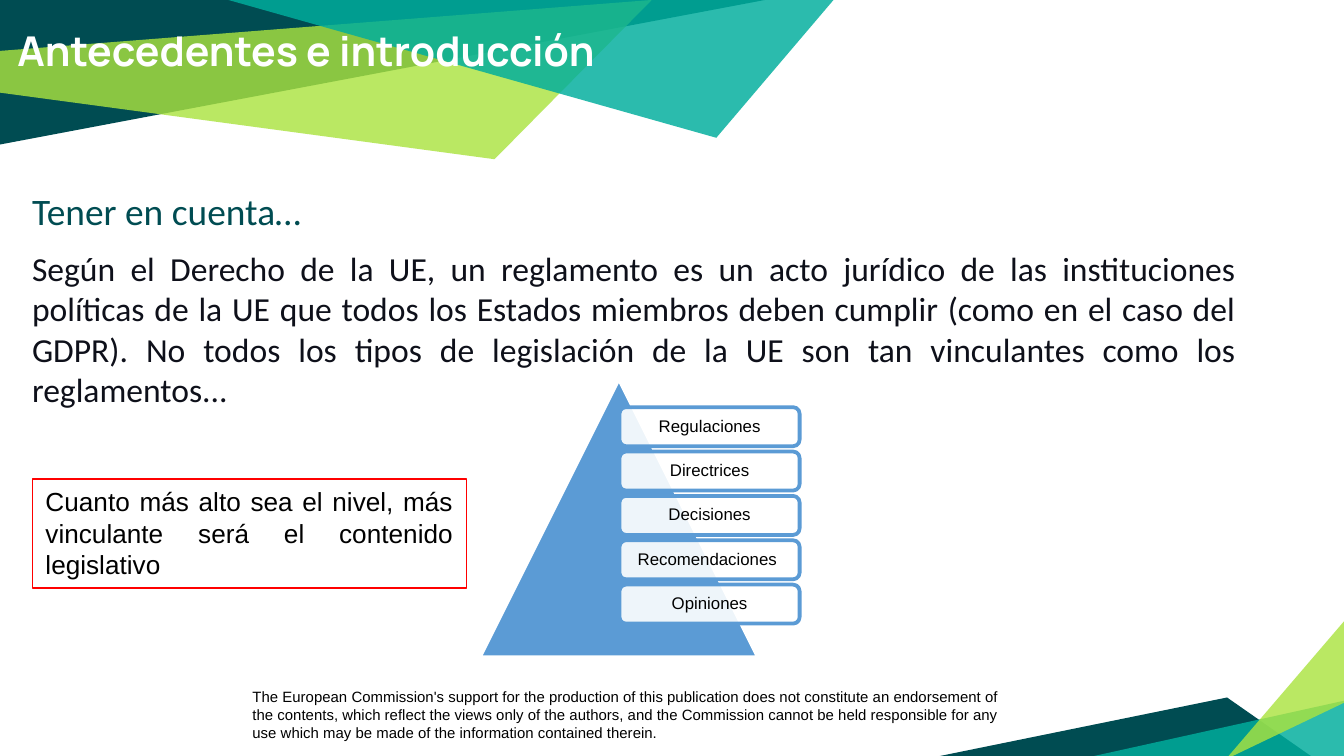
from dataclasses import dataclass

import pptx
import pptx.dml.color
import pptx.enum.shapes
import pptx.enum.text
import pptx.oxml.ns
import pptx.util
from lxml import etree

PX = 4572  # EMU per px, 200 px to the inch
SHAPE = pptx.enum.shapes.MSO_SHAPE
ALIGN = pptx.enum.text.PP_ALIGN
ANCHOR = pptx.enum.text.MSO_ANCHOR
AUTO = pptx.enum.text.MSO_AUTO_SIZE


@dataclass(frozen=True)
class Theme:
    dark: str = "004C52"
    lime: str = "ABE33F"
    teal: str = "00AE9D"
    blue: str = "5B9BD5"
    red: str = "FF0000"
    white: str = "FFFFFF"
    black: str = "000000"
    ink: str = "0E101A"
    title_size: int = 22
    heading_size: int = 20
    body_size: int = 18
    note_size: int = 14
    level_size: int = 9
    footer_size: int = 8


T = Theme()


@dataclass(frozen=True)
class Box:
    x: int
    y: int
    w: int
    h: int

    def emu(self) -> tuple[int, ...]:
        return tuple(v * PX for v in (self.x, self.y, self.w, self.h))


@dataclass(frozen=True)
class Ribbon:
    points: tuple[tuple[int, int], ...]
    color: str
    alpha: int = 100


@dataclass(frozen=True)
class Inset:
    left: int = 20
    top: int = 10
    right: int = 20
    bottom: int = 10


@dataclass(frozen=True)
class Style:
    font: str
    size: int
    color: str
    bold: bool = False
    align: ALIGN = ALIGN.LEFT
    anchor: ANCHOR = ANCHOR.TOP
    inset: Inset = Inset()
    grow: bool = False
    spacing: float = 1.0


RIBBONS = (
    Ribbon(((0, 0), (0, 215), (1138, 0)), T.dark),
    Ribbon(((-2, 76), (0, 138), (736, 237), (970, 0)), T.lime, 81),
    Ribbon(((1394, 1126), (1952, 1126), (1826, 1038)), T.dark),
    Ribbon(((2004, 1042), (2004, 1130), (1606, 1130)), T.teal, 83),
    Ribbon(((2004, 1044), (2004, 920), (1824, 1130)), T.lime, 81),
    Ribbon(((340, 0), (1066, 205), (1242, -2), (1218, 0)), T.teal, 83),
)
LEVELS = ("Regulaciones", "Directrices", "Decisiones", "Recomendaciones ", "Opiniones")
FIRST_LEVEL = Box(922, 606, 268, 58)
LEVEL_STEP = 66

WIDE = Inset(20, 20, 20, 20)
TITLE = Style("Manrope", T.title_size, T.white, bold=True, anchor=ANCHOR.MIDDLE, inset=WIDE)
HEADING = Style("Calibri", T.heading_size, T.dark, anchor=ANCHOR.MIDDLE, inset=WIDE)
BODY = Style("Calibri", T.body_size, T.ink, align=ALIGN.JUSTIFY, inset=Inset(right=38), grow=True)
NOTE = Style("Arial", T.note_size, T.black, align=ALIGN.JUSTIFY, grow=True)
LEVEL = Style("Arial", T.level_size, T.black, align=ALIGN.CENTER, anchor=ANCHOR.MIDDLE,
              inset=Inset(10, 10, 10, 10), spacing=0.9)
FOOTER = Style("Arial", T.footer_size, T.black, grow=True)


def rgb(color: str) -> pptx.dml.color.RGBColor:
    return pptx.dml.color.RGBColor.from_string(color)


def paint(sp, fill: str | None, line: str | None = None, width: float = 0, alpha: int = 100) -> None:
    """Set fill and outline; None leaves either one empty, alpha is the fill's opacity in percent."""
    sp.shadow.inherit = False
    if fill:
        sp.fill.solid()
        sp.fill.fore_color.rgb = rgb(fill)
    else:
        sp.fill.background()
    if alpha < 100:
        clr = sp._element.spPr.find(pptx.oxml.ns.qn("a:solidFill"))[0]
        etree.SubElement(clr, pptx.oxml.ns.qn("a:alpha"), val=str(alpha * 1000))
    if line:
        sp.line.color.rgb = rgb(line)
        sp.line.width = pptx.util.Pt(width)
    else:
        sp.line.fill.background()


def write(sp, text: str, style: Style) -> None:
    tf = sp.text_frame
    tf.text = text
    tf.word_wrap = True
    tf.auto_size = AUTO.SHAPE_TO_FIT_TEXT if style.grow else AUTO.NONE
    tf.vertical_anchor = style.anchor
    tf.margin_left, tf.margin_right = style.inset.left * PX, style.inset.right * PX
    tf.margin_top, tf.margin_bottom = style.inset.top * PX, style.inset.bottom * PX
    p = tf.paragraphs[0]
    p.alignment = style.align
    p.line_spacing = style.spacing
    font = p.runs[0].font
    font.name = style.font
    font.size = pptx.util.Pt(style.size)
    font.bold = style.bold
    font.color.rgb = rgb(style.color)


def add_text(s, box: Box, text: str, style: Style) -> None:
    write(s.shapes.add_textbox(*box.emu()), text, style)


def add_ribbon(s, ribbon: Ribbon) -> None:
    start, *rest = ribbon.points
    builder = s.shapes.build_freeform(*start, scale=PX)
    builder.add_line_segments(rest, close=True)
    paint(builder.convert_to_shape(), ribbon.color, alpha=ribbon.alpha)


def add_title(s, box: Box, text: str) -> None:
    """Place the title placeholder in front of everything drawn so far."""
    sp = s.shapes.title
    sp._element.getparent().append(sp._element)
    sp.left, sp.top, sp.width, sp.height = box.emu()
    write(sp, text, TITLE)


def add_pyramid(s) -> None:
    group = s.shapes.add_group_shape()
    triangle = group.shapes.add_shape(SHAPE.ISOSCELES_TRIANGLE, *Box(714, 564, 414, 414).emu())
    paint(triangle, T.blue, T.white, 2)
    first = FIRST_LEVEL
    for i, name in enumerate(LEVELS):
        box = Box(first.x, first.y + i * LEVEL_STEP, first.w, first.h)
        sp = group.shapes.add_shape(SHAPE.ROUNDED_RECTANGLE, *box.emu())
        paint(sp, T.white, T.blue, 2, alpha=90)
        write(sp, name, LEVEL)


def main() -> None:
    prs = pptx.Presentation()
    prs.slide_width, prs.slide_height = 2000 * PX, 1125 * PX
    s = prs.slides.add_slide(prs.slide_layouts[5])

    add_text(s, Box(356, 1014, 1158, 100),
             "The European Commission's support for the production of this publication does not "
             "constitute an endorsement of the contents, which reflect the views only of the "
             "authors, and the Commission cannot be held responsible for any use which may be "
             "made of the information contained therein.", FOOTER)
    for ribbon in RIBBONS:
        add_ribbon(s, ribbon)
    add_title(s, Box(6, 15, 1694, 120), "Antecedentes e introducción")
    add_text(s, Box(28, 359, 1850, 310),
             "Según el Derecho de la UE, un reglamento es un acto jurídico de las instituciones "
             "políticas de la UE que todos los Estados miembros deben cumplir (como en el caso "
             "del GDPR). No todos los tipos de legislación de la UE son tan vinculantes como "
             "los reglamentos...", BODY)
    add_text(s, Box(28, 268, 1386, 90), "Tener en cuenta…", HEADING)
    add_pyramid(s)

    note = s.shapes.add_shape(SHAPE.RECTANGLE, *Box(48, 713, 646, 162).emu())
    paint(note, None, T.red, 0.75)
    write(note, "Cuanto más alto sea el nivel, más vinculante será el contenido legislativo", NOTE)

    prs.save("out.pptx")


if __name__ == "__main__":
    main()
